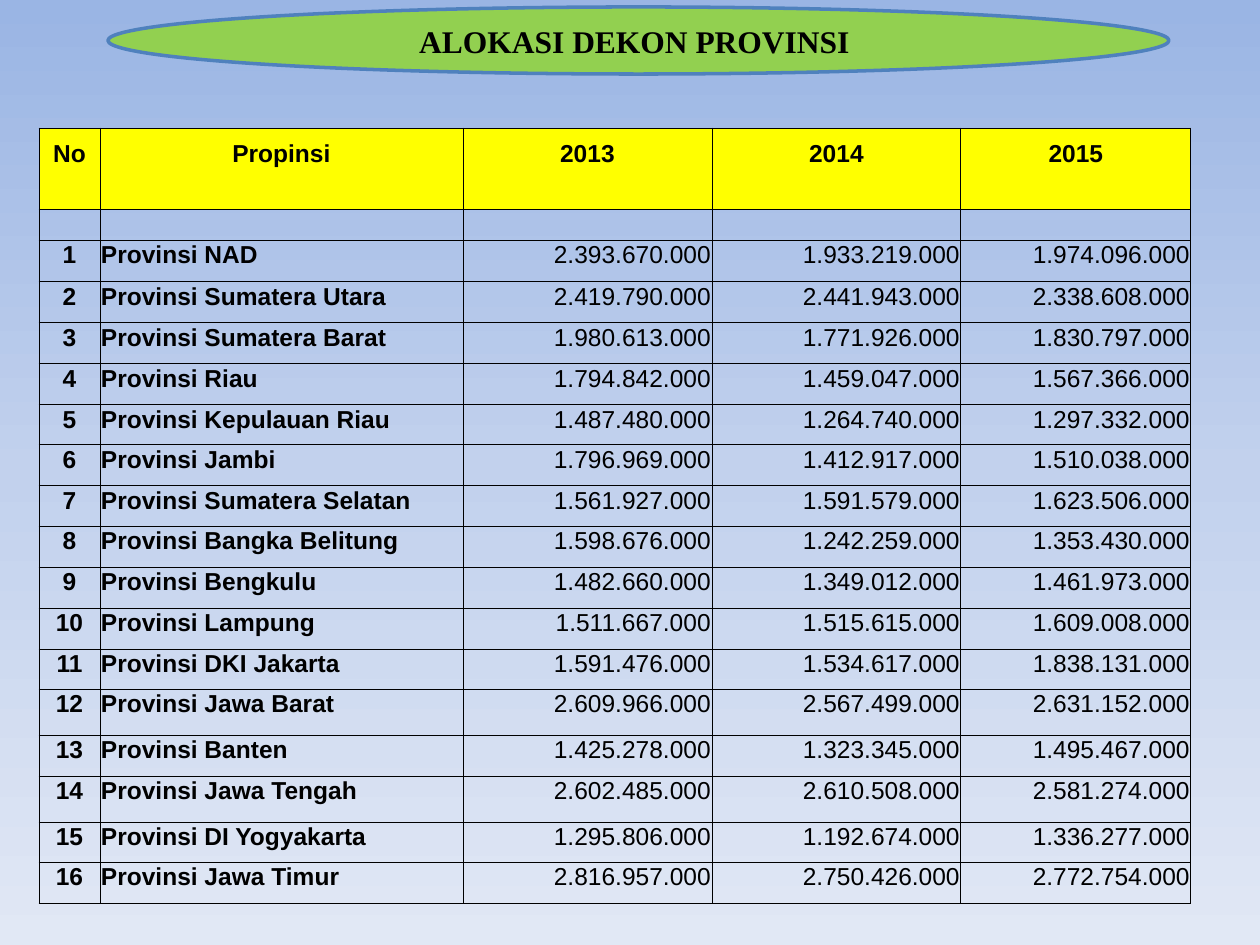
import copy
import itertools
from dataclasses import dataclass
from typing import NamedTuple

import pptx
import pptx.dml.color
import pptx.enum.shapes
import pptx.enum.text
import pptx.oxml.ns
import pptx.util
from lxml import etree

PX = 914400 / 126
ALIGN = pptx.enum.text.PP_ALIGN
ANCHOR = pptx.enum.text.MSO_ANCHOR
qn = pptx.oxml.ns.qn


@dataclass(frozen=True)
class Theme:
    background: tuple = ((0, "9AB5E4"), (0.5, "C2D1ED"), (1, "E1E8F5"))
    ink: str = "000000"
    banner: str = "92D050"
    banner_line: str = "4F81BD"
    header: str = "FFFF00"
    title_font: str = "Times New Roman"
    table_font: str = "Arial"
    title_size: int = 18
    table_size: int = 14
    banner_width: int = 2
    border_width: float = 0.5


class Box(NamedTuple):
    left: int
    top: int
    width: int
    height: int

    def emu(self) -> list:
        return [px(v) for v in self]


class Province(NamedTuple):
    name: str
    thousands: tuple


THEME = Theme()
BANNER = Box(108, 7, 1061, 67)
TABLE_LEFT = 39
COLUMN_WIDTHS = (61, 363, 249, 249, 230)
ROW_EDGES = (128, 168, 209, 240, 282, 323, 364, 405, 445, 486, 527,
             568, 609, 650, 690, 736, 777, 823, 863, 904)
HEADINGS = ("No", "Propinsi", "2013", "2014", "2015")
PROVINCES = (
    Province("NAD", (2393670, 1933219, 1974096)),
    Province("Sumatera Utara", (2419790, 2441943, 2338608)),
    Province("Sumatera Barat", (1980613, 1771926, 1830797)),
    Province("Riau", (1794842, 1459047, 1567366)),
    Province("Kepulauan Riau", (1487480, 1264740, 1297332)),
    Province("Jambi", (1796969, 1412917, 1510038)),
    Province("Sumatera Selatan", (1561927, 1591579, 1623506)),
    Province("Bangka Belitung", (1598676, 1242259, 1353430)),
    Province("Bengkulu", (1482660, 1349012, 1461973)),
    Province("Lampung", (1511667, 1515615, 1609008)),
    Province("DKI Jakarta", (1591476, 1534617, 1838131)),
    Province("Jawa Barat", (2609966, 2567499, 2631152)),
    Province("Banten", (1425278, 1323345, 1495467)),
    Province("Jawa Tengah", (2602485, 2610508, 2581274)),
    Province("DI Yogyakarta", (1295806, 1192674, 1336277)),
    Province("Jawa Timur", (2816957, 2750426, 2772754)),
)


def px(value: int) -> int:
    return round(value * PX)


def rgb(color: str) -> pptx.dml.color.RGBColor:
    return pptx.dml.color.RGBColor.from_string(color)


def write(tf, text: str, *, font: str = THEME.table_font, size: int = THEME.table_size,
          bold: bool = True, align=ALIGN.LEFT) -> None:
    p = tf.paragraphs[0]
    p.alignment = align
    if not text:
        p._p.get_or_add_endParaRPr().set("sz", str(size * 100))
        return
    r = p.add_run()
    r.text = text
    r.font.name, r.font.size, r.font.bold = font, pptx.util.Pt(size), bold
    r.font.color.rgb = rgb(THEME.ink)


def paint_background(s) -> None:
    fill = s.background.fill
    fill.gradient()
    fill.gradient_angle = 270
    stops = next(s._element.iter(qn("a:gsLst")))
    stops.append(copy.deepcopy(stops[0]))
    for stop, (position, color) in zip(fill.gradient_stops, THEME.background):
        stop.position = position
        stop.color.rgb = rgb(color)


def add_banner(s) -> None:
    sp = s.shapes.add_shape(pptx.enum.shapes.MSO_SHAPE.OVAL, *BANNER.emu())
    sp.shadow.inherit = False
    sp.fill.solid()
    sp.fill.fore_color.rgb = rgb(THEME.banner)
    sp.line.color.rgb = rgb(THEME.banner_line)
    sp.line.width = pptx.util.Pt(THEME.banner_width)

    title = s.shapes.title
    title.left, title.top, title.width, title.height = BANNER.emu()
    s.shapes._spTree.append(title._element)  # bring the title in front of the ellipse
    tf = title.text_frame
    tf.word_wrap = False
    tf.auto_size = pptx.enum.text.MSO_AUTO_SIZE.NONE
    tf.vertical_anchor = ANCHOR.MIDDLE
    write(tf, "ALOKASI DEKON PROVINSI ", font=THEME.title_font,
          size=THEME.title_size, align=ALIGN.CENTER)


def set_borders(cell, hidden: str = "") -> None:
    """Outline a cell, leaving out the side named by hidden (L, R, T or B)."""
    tc_pr = cell._tc.get_or_add_tcPr()
    width = str(pptx.util.Pt(THEME.border_width))
    for side in "LRTB":
        line = etree.SubElement(tc_pr, qn(f"a:ln{side}"), w=width)
        if side == hidden:
            etree.SubElement(line, qn("a:noFill"))
        else:
            fill = etree.SubElement(line, qn("a:solidFill"))
            etree.SubElement(fill, qn("a:srgbClr"), val=THEME.ink)


def table_rows() -> list:
    blank = ("",) * len(HEADINGS)
    rows = [HEADINGS, blank, blank]
    for number, province in enumerate(PROVINCES, 1):
        amounts = [f"{v:,}.000".replace(",", ".") for v in province.thousands]
        rows.append((str(number), f"Provinsi {province.name}", *amounts))
    return rows


def format_cell(cell, text: str, row: int, column: int) -> None:
    header = row < 2
    cell.margin_left = cell.margin_right = cell.margin_top = px(1)
    cell.margin_bottom = 0
    cell.vertical_anchor = ANCHOR.BOTTOM if row == 0 else ANCHOR.TOP
    set_borders(cell, hidden={0: "B", 1: "T"}.get(row, ""))
    if header:
        cell.fill.solid()
        cell.fill.fore_color.rgb = rgb(THEME.header)
    else:
        cell.fill.background()
    if header or column == 0:
        align = ALIGN.CENTER
    else:
        align = ALIGN.LEFT if column == 1 else ALIGN.RIGHT
    write(cell.text_frame, text, bold=header or column < 2, align=align)


def add_allocation_table(s) -> None:
    rows = table_rows()
    box = Box(TABLE_LEFT, ROW_EDGES[0], sum(COLUMN_WIDTHS), ROW_EDGES[-1] - ROW_EDGES[0])
    table = s.shapes.add_table(len(rows), len(HEADINGS), *box.emu()).table
    table.first_row = table.horz_banding = False
    for column, width in zip(table.columns, COLUMN_WIDTHS):
        column.width = px(width)
    for row, (top, bottom) in zip(table.rows, itertools.pairwise(ROW_EDGES)):
        row.height = px(bottom - top)
    for i, texts in enumerate(rows):
        for j, text in enumerate(texts):
            format_cell(table.cell(i, j), text, i, j)


def main() -> None:
    prs = pptx.Presentation()
    prs.slide_width, prs.slide_height = px(1260), px(945)
    s = prs.slides.add_slide(prs.slide_layouts[5])
    paint_background(s)
    add_banner(s)
    add_allocation_table(s)
    prs.save("out.pptx")


if __name__ == "__main__":
    main()
